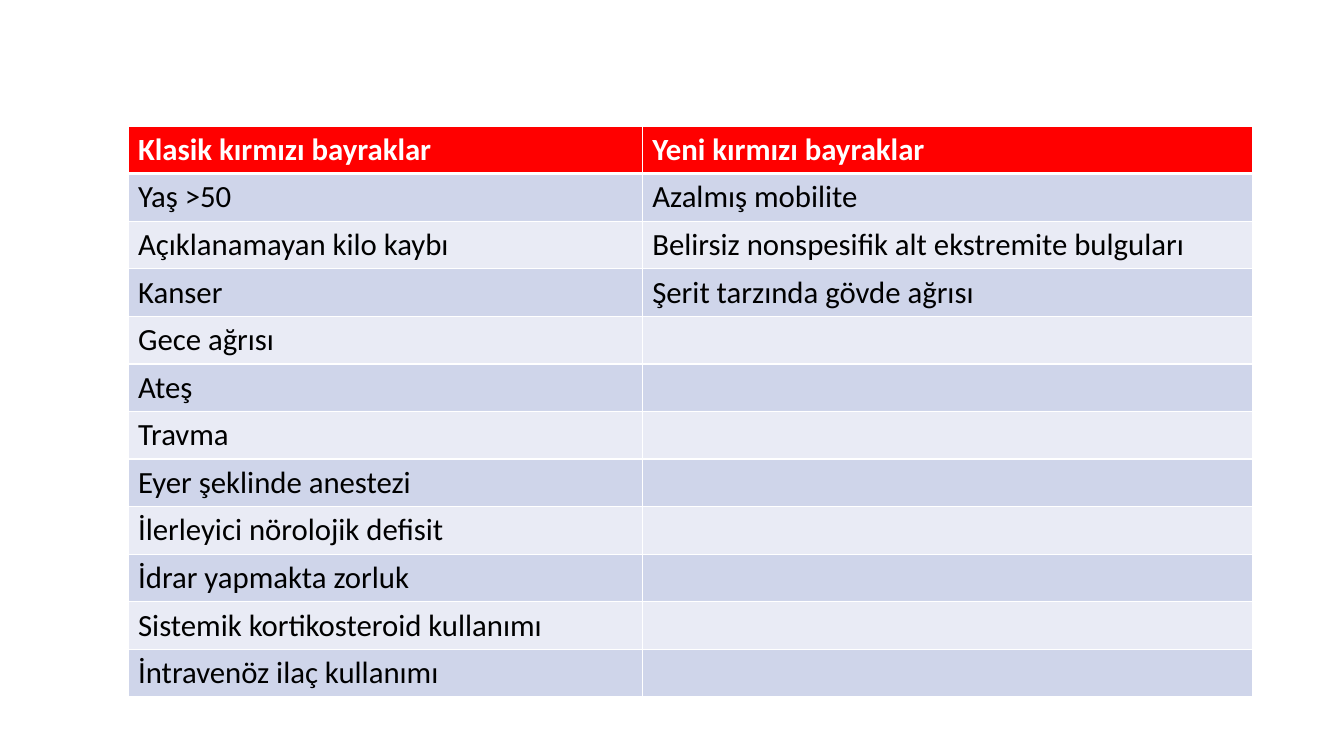
from itertools import zip_longest

from lxml import etree
from pptx import Presentation
from pptx.dml.color import RGBColor
from pptx.enum.text import MSO_ANCHOR
from pptx.oxml.ns import qn
from pptx.util import Inches, Pt

TOP = MSO_ANCHOR.TOP
FONT = "Calibri"
WHITE, BLACK, RED = "FFFFFF", "000000", "FF0000"
BANDS = ("CFD5EA", "E9EBF5")
COLUMN_WIDTHS = (5.1, 6.05)
ROW_HEIGHT = 0.47

HEADINGS = ("Klasik kırmızı bayraklar", "Yeni kırmızı bayraklar")
CLASSIC_FLAGS = (
    "Yaş >50",
    "Açıklanamayan kilo kaybı",
    "Kanser",
    "Gece ağrısı",
    "Ateş",
    "Travma",
    "Eyer şeklinde anestezi",
    "İlerleyici nörolojik defisit",
    "İdrar yapmakta zorluk",
    "Sistemik kortikosteroid kullanımı",
    "İntravenöz ilaç kullanımı",
)
NEW_FLAGS = (
    "Azalmış mobilite",
    "Belirsiz nonspesifik alt ekstremite bulguları",
    "Şerit tarzında gövde ağrısı",
)


def color(hex_value):
    return RGBColor.from_string(hex_value)


def set_borders(cell, top, bottom):
    """Draw white cell borders; widths are in points."""
    properties = cell._tc.get_or_add_tcPr()
    sides = (("a:lnL", 1), ("a:lnR", 1), ("a:lnT", top), ("a:lnB", bottom))
    for index, (tag, width) in enumerate(sides):
        line = etree.Element(qn(tag), w=str(Pt(width)))
        fill = etree.SubElement(line, qn("a:solidFill"))
        etree.SubElement(fill, qn("a:srgbClr"), val=WHITE)
        properties.insert(index, line)


def fill_cell(cell, text, background, text_color, bold):
    cell.fill.solid()
    cell.fill.fore_color.rgb = color(background)
    cell.vertical_anchor = TOP
    cell.text_frame.text = text
    for span in cell.text_frame.paragraphs[0].runs:
        span.font.name = FONT
        span.font.size = Pt(22)
        span.font.bold = bold
        span.font.color.rgb = color(text_color)


def add_flag_table(page, left, top):
    rows = [HEADINGS, *zip_longest(CLASSIC_FLAGS, NEW_FLAGS, fillvalue="")]
    frame = page.shapes.add_table(
        len(rows), len(COLUMN_WIDTHS), Inches(left), Inches(top),
        Inches(sum(COLUMN_WIDTHS)), Inches(ROW_HEIGHT * len(rows)))
    table = frame.table
    for column, width in zip(table.columns, COLUMN_WIDTHS):
        column.width = Inches(width)

    for row_index, texts in enumerate(rows):
        table.rows[row_index].height = Inches(ROW_HEIGHT)
        is_header = row_index == 0
        background = RED if is_header else BANDS[(row_index - 1) % 2]
        text_color = WHITE if is_header else BLACK
        for column_index, text in enumerate(texts):
            cell = table.cell(row_index, column_index)
            fill_cell(cell, text, background, text_color, is_header)
            # Thick rule between the header and the first row
            set_borders(cell, 3 if row_index == 1 else 1, 3 if is_header else 1)


def main():
    deck = Presentation()
    deck.slide_width = Inches(13.33)
    deck.slide_height = Inches(7.5)
    page = deck.slides.add_slide(deck.slide_layouts[6])

    # Table of red flags
    add_flag_table(page, 1.27, 1.25)

    deck.save("out.pptx")


if __name__ == "__main__":
    main()
